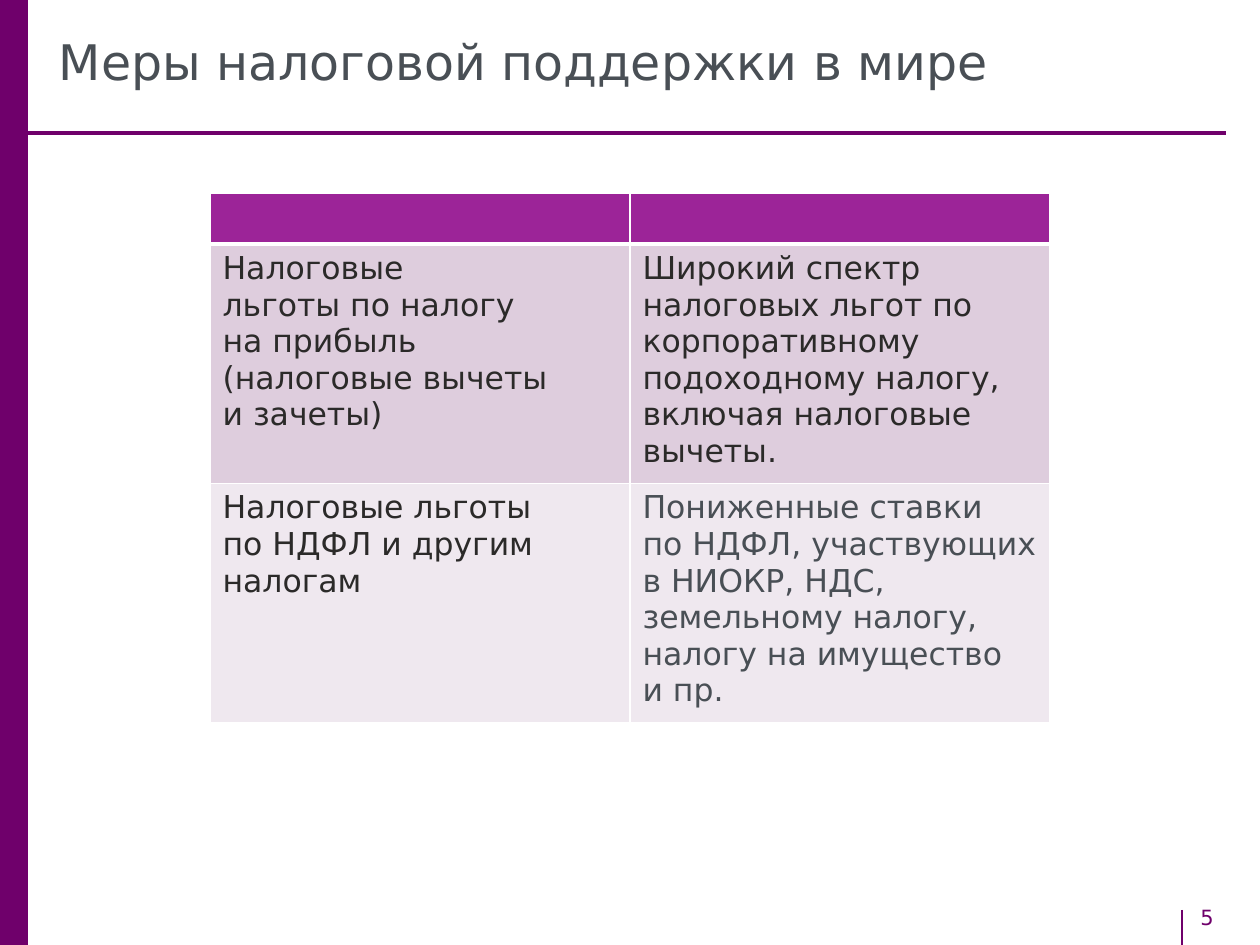
from dataclasses import dataclass

from lxml import etree
from pptx import Presentation
from pptx.dml.color import RGBColor
from pptx.enum.shapes import MSO_CONNECTOR, MSO_SHAPE
from pptx.enum.text import MSO_ANCHOR, MSO_AUTO_SIZE, PP_ALIGN
from pptx.oxml.ns import qn
from pptx.util import Emu, Pt

STRAIGHT = MSO_CONNECTOR.STRAIGHT
RECTANGLE = MSO_SHAPE.RECTANGLE
MIDDLE = MSO_ANCHOR.MIDDLE
NO_AUTOSIZE = MSO_AUTO_SIZE.NONE
LEFT = PP_ALIGN.LEFT

FONT = "DejaVu Sans"
PURPLE, HEADER, WHITE = "6F006B", "9C2498", "FFFFFF"
GREY, DARK = "494F55", "2B2A29"
ROW_FILLS = ("DECDDD", "EFE8EF")
EMU_PER_PX = 914400 / 126


@dataclass
class Rule:
    x1: int
    y1: int
    x2: int
    y2: int
    width: float


@dataclass
class CellText:
    lines: list[str]
    color: str = DARK


RULES = [Rule(1182, 910, 1182, 945, 1), Rule(27, 133, 1226, 133, 2.25)]

ROWS = [
    [
        CellText(["Налоговые", "льготы по налогу", "на прибыль",
                  "(налоговые вычеты", "и зачеты)"]),
        CellText(["Широкий спектр",
                  "налоговых льгот по корпоративному подоходному налогу,",
                  "включая налоговые вычеты."]),
    ],
    [
        CellText(["Налоговые льготы", "по НДФЛ и другим", "налогам"]),
        CellText(["Пониженные ставки", "по НДФЛ, участвующих",
                  "в НИОКР, НДС, земельному налогу, налогу на имущество",
                  "и пр."], GREY),
    ],
]


def px(n: int) -> Emu:
    return Emu(round(n * EMU_PER_PX))


def rgb(value: str) -> RGBColor:
    return RGBColor.from_string(value)


def style(p, size: int, color: str) -> None:
    p.font.name = FONT
    p.font.size = Pt(size)
    p.font.color.rgb = rgb(color)


def draw_rule(slide, rule: Rule) -> None:
    line = slide.shapes.add_connector(
        STRAIGHT, px(rule.x1), px(rule.y1), px(rule.x2), px(rule.y2))
    line.line.color.rgb = rgb(PURPLE)
    line.line.width = Pt(rule.width)
    etree.SubElement(line._element.spPr, qn("a:effectLst"))


def draw_bar(slide) -> None:
    sp = slide.shapes.add_shape(RECTANGLE, px(-3), px(0), px(31), px(945))
    sp.shadow.inherit = False
    sp.fill.solid()
    sp.fill.fore_color.rgb = rgb(PURPLE)
    sp.line.fill.background()


def draw_title(slide, text: str) -> None:
    sp = slide.shapes.title
    sp.left, sp.top, sp.width, sp.height = px(59), px(24), px(978), px(82)
    tf = sp.text_frame
    tf.margin_left = tf.margin_right = tf.margin_top = tf.margin_bottom = 0
    tf.vertical_anchor = MIDDLE
    tf.auto_size = NO_AUTOSIZE
    tf.word_wrap = True
    tf.text = text
    p = tf.paragraphs[0]
    p.alignment = LEFT
    p.line_spacing = 0.9
    style(p, 28, GREY)


def draw_page_number(slide, text: str) -> None:
    sp = slide.shapes.add_textbox(px(1188), px(898), px(62), px(38))
    tf = sp.text_frame
    tf.word_wrap = False
    tf.text = text
    style(tf.paragraphs[0], 12, PURPLE)


def set_borders(cell, bottom: int) -> None:
    tc_pr = cell._tc.get_or_add_tcPr()
    for i, (side, width) in enumerate(
            [("L", 1), ("R", 1), ("T", 1), ("B", bottom)]):
        ln = etree.Element(qn(f"a:ln{side}"), w=str(Pt(width)))
        fill = etree.SubElement(ln, qn("a:solidFill"))
        etree.SubElement(fill, qn("a:srgbClr"), val=WHITE)
        tc_pr.insert(i, ln)


def format_cell(cell, fill: str, bottom: int = 1) -> None:
    cell.fill.solid()
    cell.fill.fore_color.rgb = rgb(fill)
    set_borders(cell, bottom)


def draw_table(slide) -> None:
    table = slide.shapes.add_table(
        len(ROWS) + 1, 2, px(210), px(193), px(840), px(513)).table
    for row, height in zip(table.rows, (51, 231, 231)):
        row.height = px(height)
    for cell in table.rows[0].cells:
        format_cell(cell, HEADER, 3)
    for r, (texts, fill) in enumerate(zip(ROWS, ROW_FILLS), 1):
        for c, content in enumerate(texts):
            cell = table.cell(r, c)
            format_cell(cell, fill)
            cell.text = "\n".join(content.lines)
            for p in cell.text_frame.paragraphs:
                style(p, 18, content.color)


def main() -> None:
    prs = Presentation()
    prs.slide_width, prs.slide_height = px(1260), px(945)
    slide = prs.slides.add_slide(prs.slide_layouts[5])
    draw_page_number(slide, "5")
    draw_bar(slide)
    for rule in RULES:
        draw_rule(slide, rule)
    draw_title(slide, "Меры налоговой поддержки в мире")
    draw_table(slide)
    prs.save("out.pptx")


if __name__ == "__main__":
    main()
